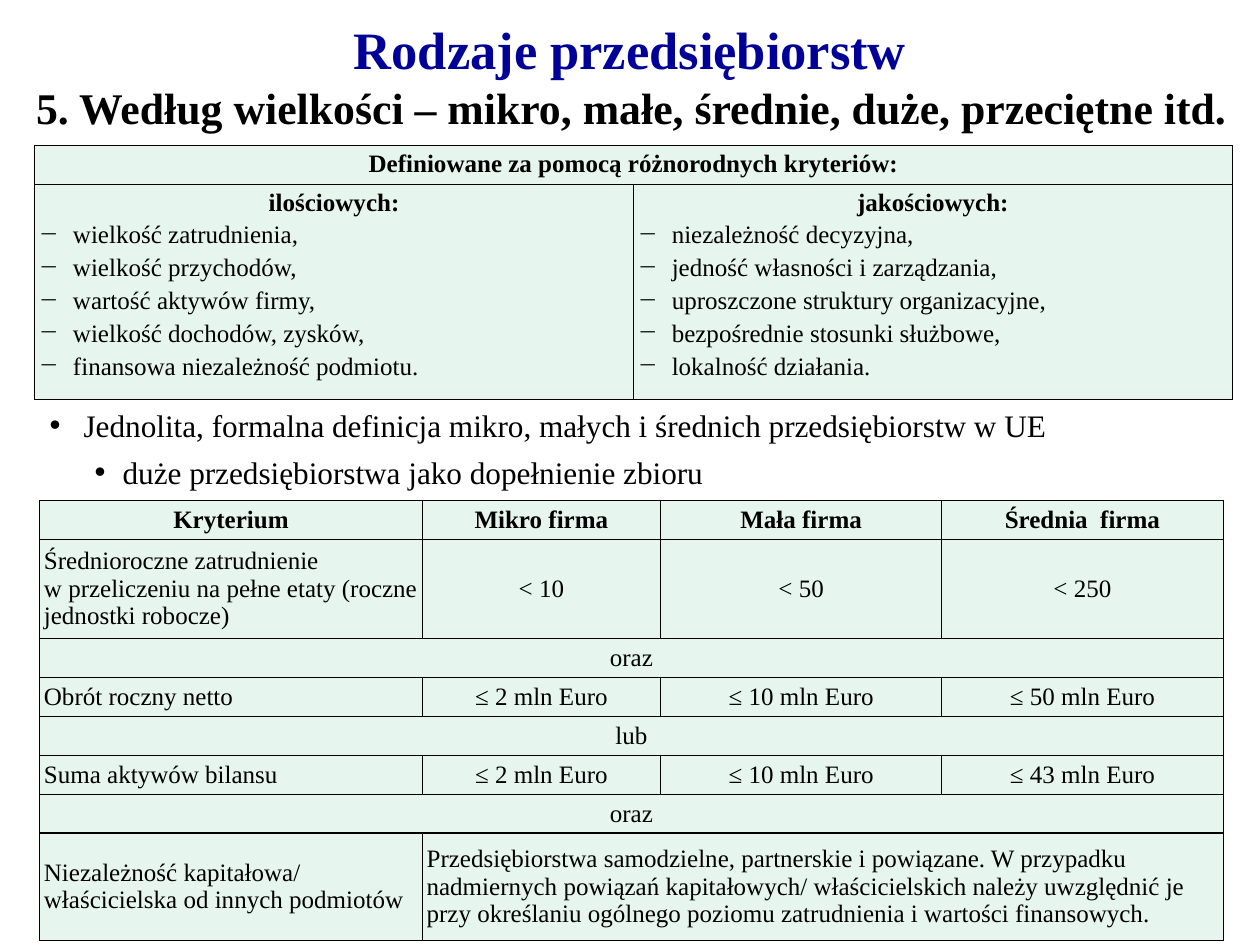
from lxml import etree
from pptx import Presentation
from pptx.dml.color import RGBColor
from pptx.enum import text
from pptx.oxml import ns
from pptx.util import Cm, Pt

TITLE = "Rodzaje przedsiębiorstw"
SUBTITLE = "5. Według wielkości – mikro, małe, średnie, duże, przeciętne itd."
DEFINITION = [
    "Jednolita, formalna definicja mikro, małych i średnich przedsiębiorstw w UE",
    "duże przedsiębiorstwa jako dopełnienie zbioru",
]
CRITERIA_HEADING = "Definiowane za pomocą różnorodnych kryteriów:"
CRITERIA = {
    "ilościowych:": [
        "wielkość zatrudnienia,",
        "wielkość przychodów,",
        "wartość aktywów firmy,",
        "wielkość dochodów, zysków,",
        "finansowa niezależność podmiotu.",
    ],
    "jakościowych:": [
        "niezależność decyzyjna,",
        "jedność własności i zarządzania,",
        "uproszczone struktury organizacyjne,",
        "bezpośrednie stosunki służbowe,",
        "lokalność działania.",
    ],
}
# A row shorter than the table lets its last cell span the remaining columns.
SIZE_CLASSES = [
    ("Kryterium", "Mikro firma", "Mała firma", "Średnia  firma"),
    ("Średnioroczne zatrudnienie\nw przeliczeniu na pełne etaty (roczne jednostki robocze)",
     "< 10", "< 50", "< 250"),
    ("oraz",),
    ("Obrót roczny netto", "≤ 2 mln Euro", "≤ 10 mln Euro", "≤ 50 mln Euro"),
    ("lub",),
    ("Suma aktywów bilansu", "≤ 2 mln Euro", "≤ 10 mln Euro", "≤ 43 mln Euro"),
    ("oraz",),
    ("Niezależność kapitałowa/ właścicielska od innych podmiotów",
     "Przedsiębiorstwa samodzielne, partnerskie i powiązane. W przypadku nadmiernych "
     "powiązań kapitałowych/ właścicielskich należy uwzględnić je przy określaniu "
     "ogólnego poziomu zatrudnienia i wartości finansowych."),
]

THEME = {
    "font": "Times New Roman",
    "title": 42, "subtitle": 35, "body": 25, "cell": 20,
    "navy": "000099", "black": "000000", "mint": "E7F5EF",
    "border": 0.96,
}
LINE_ROW = 1.1  # height in cm of a table row with one line
CENTER, LEFT = text.PP_ALIGN.CENTER, text.PP_ALIGN.LEFT


def write(frame, content, *, first=False, size="cell", color="black", bold=False,
          align=LEFT, level=0, bullet=None, hang=0.96, margin=0.96,
          before=0, after=0, spacing=1.0):
    """Put one formatted paragraph in a text frame; hang and margin are in cm."""
    paragraph = frame.paragraphs[0] if first else frame.add_paragraph()
    paragraph.text = content
    paragraph.level = level
    if bullet:
        properties = paragraph._p.get_or_add_pPr()
        properties.set("marL", str(Cm(margin)))
        properties.set("indent", str(-Cm(hang)))
        etree.SubElement(properties, ns.qn("a:buChar")).set("char", bullet)
    paragraph.alignment = align
    paragraph.line_spacing = spacing
    paragraph.space_before, paragraph.space_after = Pt(before), Pt(after)
    for run in paragraph.runs:
        run.font.name = THEME["font"]
        run.font.size = Pt(THEME[size])
        run.font.bold = bold
        run.font.color.rgb = RGBColor.from_string(THEME[color])


def place(shape, left, top, width, height, wrap=True):
    """Position a text shape (cm) and set its frame; return the frame."""
    shape.left, shape.top = Cm(left), Cm(top)
    shape.width, shape.height = Cm(width), Cm(height)
    frame = shape.text_frame
    frame.word_wrap = wrap
    frame.auto_size = text.MSO_AUTO_SIZE.NONE
    frame.vertical_anchor = text.MSO_ANCHOR.TOP
    frame.margin_left = frame.margin_right = Cm(0.36)
    frame.margin_top = frame.margin_bottom = Cm(0.18)
    return frame


def style_cell(cell, anchor):
    cell.margin_left = cell.margin_right = Cm(0.12)
    cell.margin_top = cell.margin_bottom = Cm(0.12)
    cell.vertical_anchor = anchor
    cell.fill.solid()
    cell.fill.fore_color.rgb = RGBColor.from_string(THEME["mint"])
    properties = cell._tc.get_or_add_tcPr()
    for index, side in enumerate(("lnL", "lnR", "lnT", "lnB")):
        line = etree.Element(ns.qn(f"a:{side}"), w=str(Pt(THEME["border"])))
        fill = etree.SubElement(line, ns.qn("a:solidFill"))
        etree.SubElement(fill, ns.qn("a:srgbClr"), val=THEME["black"])
        properties.insert(index, line)


def add_grid(slide, left, top, widths, heights, anchor):
    """Add a table with evenly styled cells from its column and row sizes in cm."""
    table = slide.shapes.add_table(
        len(heights), len(widths), Cm(left), Cm(top),
        Cm(sum(widths)), Cm(sum(heights))).table
    table.first_row = table.horz_banding = False
    for column, width in zip(table.columns, widths):
        column.width = Cm(width)
    for row, height in zip(table.rows, heights):
        row.height = Cm(height)
    for cell in table.iter_cells():
        style_cell(cell, anchor)
    return table


def add_criteria(slide):
    table = add_grid(slide, 0.98, 4.11, [16.9, 16.9], [LINE_ROW, 6.07], text.MSO_ANCHOR.TOP)
    table.cell(0, 0).merge(table.cell(0, 1))
    write(table.cell(0, 0).text_frame, CRITERIA_HEADING, first=True, bold=True, align=CENTER)
    for column, (heading, items) in enumerate(CRITERIA.items()):
        frame = table.cell(1, column).text_frame
        write(frame, heading, first=True, bold=True, align=CENTER, after=2)
        for item in items:
            write(frame, item, bullet="−", before=2, after=2)


def add_size_classes(slide):
    widths = [10.8, 6.72, 7.94, 7.94]
    heights = [LINE_ROW] * len(SIZE_CLASSES)
    heights[1], heights[-1] = 2.79, 3.02
    table = add_grid(slide, 1.12, 14.12, widths, heights, text.MSO_ANCHOR.MIDDLE)
    last = len(widths) - 1
    for row, contents in enumerate(SIZE_CLASSES):
        end = len(contents) - 1
        if end < last:
            table.cell(row, end).merge(table.cell(row, last))
        for column, content in enumerate(contents):
            is_prose = len(contents) == 2 or (column == 0 and 0 < row and end == last)
            write(table.cell(row, column).text_frame, content, first=True,
                  bold=row == 0, align=LEFT if is_prose else CENTER)


def main():
    presentation = Presentation()
    presentation.slide_width, presentation.slide_height = Cm(35.56), Cm(26.67)
    slide = presentation.slides.add_slide(presentation.slide_layouts[1])
    title, body = slide.placeholders

    write(place(title, 0, 0.3, 35.56, 2.13), TITLE, first=True,
          size="title", color="navy", bold=True, align=CENTER)
    subtitle = slide.shapes.add_textbox(0, 0, 0, 0)
    write(place(subtitle, 0.66, 2.11, 34.32, 1.83, wrap=False), SUBTITLE,
          first=True, size="subtitle", bold=True)
    add_criteria(slide)

    frame = place(body, 1.04, 11.13, 33.48, 1.78)
    for level, (content, margin, hang) in enumerate(
            zip(DEFINITION, (0.96, 2.06), (0.96, 0.79))):
        write(frame, content, first=level == 0, size="body", level=level, bullet="•",
              margin=margin, hang=hang, before=3 * level, spacing=1.15)
    add_size_classes(slide)
    presentation.save("out.pptx")


if __name__ == "__main__":
    main()
